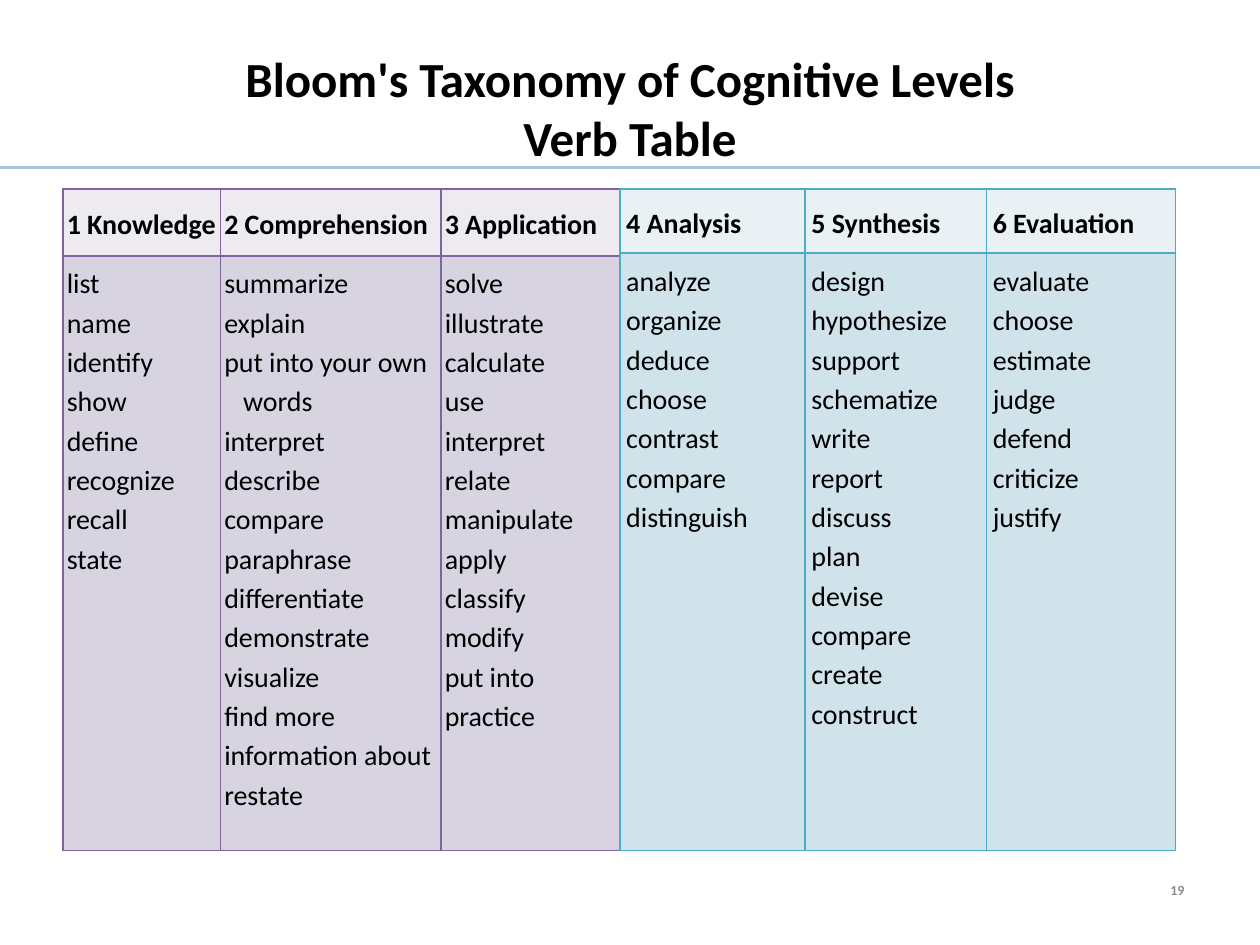
from pptx import Presentation
from pptx.dml.color import RGBColor
from pptx.enum.text import MSO_ANCHOR, PP_ALIGN
from pptx.oxml.ns import qn
from pptx.util import Inches, Pt
from lxml.etree import SubElement

HANGING_VERB = "put into your own words"

LOWER_LEVELS = {
    "1 Knowledge": "list, name, identify, show, define, recognize, recall, state",
    "2 Comprehension": "summarize, explain, put into your own words, interpret, describe, "
                       "compare, paraphrase, differentiate, demonstrate, visualize, "
                       "find more information about, restate",
    "3 Application": "solve, illustrate, calculate, use, interpret, relate, manipulate, "
                     "apply, classify, modify, put into practice",
}
HIGHER_LEVELS = {
    "4 Analysis": "analyze, organize, deduce, choose, contrast, compare, distinguish",
    "5 Synthesis": "design, hypothesize, support, schematize, write, report, discuss, "
                   "plan, devise, compare, create, construct",
    "6 Evaluation": "evaluate, choose, estimate, judge, defend, criticize, justify",
}


def color(value):
    return RGBColor.from_string(value)


def write(frame, lines, size=16, bold=False, ink="000000", align=PP_ALIGN.LEFT, spacing=1.0):
    """Put each line in its own paragraph of the text frame."""
    frame.word_wrap = True
    for index, line in enumerate(lines):
        para = frame.add_paragraph() if index else frame.paragraphs[0]
        para.alignment = align
        para.line_spacing = spacing
        span = para.add_run()
        span.text = line
        span.font.name = "Calibri"
        span.font.size = Pt(size)
        span.font.bold = bold
        span.font.color.rgb = color(ink)
        if line == HANGING_VERB:
            properties = para._p.get_or_add_pPr()
            properties.set("marL", str(Inches(0.15)))
            properties.set("indent", str(-Inches(0.15)))


class SlideBuilder:
    """Holds the current slide and draws its elements in one style."""

    def __init__(self, slide):
        self.slide = slide

    def rule(self, left, right, top, ink, width):
        line = self.slide.shapes.add_connector(
            1, Inches(left), Inches(top), Inches(right), Inches(top))
        line.line.color.rgb = color(ink)
        line.line.width = Pt(width)
        SubElement(line._element.spPr, qn("a:effectLst"))

    def text(self, lines, left, top, width, height, anchor=MSO_ANCHOR.TOP,
             bottom_inset=0.05, **style):
        box = self.slide.shapes.add_textbox(
            Inches(left), Inches(top), Inches(width), Inches(height))
        box.text_frame.vertical_anchor = anchor
        box.text_frame.margin_bottom = Inches(bottom_inset)
        write(box.text_frame, lines, **style)

    def border(self, cell, ink):
        properties = cell._tc.get_or_add_tcPr()
        for side in ("lnL", "lnR", "lnT", "lnB"):
            edge = SubElement(properties, qn(f"a:{side}"), w=str(Pt(1)))
            fill = SubElement(edge, qn("a:solidFill"))
            SubElement(fill, qn("a:srgbClr"), val=ink)

    def verb_table(self, levels, left, widths, heights, inset, ink, fills):
        """Draw one column per level: its name above its verbs."""
        table = self.slide.shapes.add_table(
            2, len(levels), Inches(left), Inches(1.5),
            Inches(sum(widths)), Inches(sum(heights))).table
        table.first_row = table.horz_banding = False
        for row, height in zip(table.rows, heights):
            row.height = Inches(height)
        for index, (level, verbs) in enumerate(levels.items()):
            table.columns[index].width = Inches(widths[index])
            for row, lines in enumerate(([level], verbs.split(", "))):
                cell = table.cell(row, index)
                self.border(cell, ink)
                cell.fill.solid()
                cell.fill.fore_color.rgb = color(fills[row])
                cell.margin_left = cell.margin_right = Inches(inset)
                cell.margin_top = cell.margin_bottom = Inches(0.05)
                cell.vertical_anchor = MSO_ANCHOR.TOP if row else MSO_ANCHOR.MIDDLE
                write(cell.text_frame, lines, bold=row == 0, spacing=1.15)


def main():
    deck = Presentation()
    deck.slide_width, deck.slide_height = Inches(10), Inches(7.5)
    page = SlideBuilder(deck.slides.add_slide(deck.slide_layouts[6]))

    page.rule(0, 10, 1.33, "AAC5DA", 2)
    page.text(["Bloom's Taxonomy of Cognitive Levels", "Verb Table"], 0.5, 0.17, 9, 1.78,
              anchor=MSO_ANCHOR.MIDDLE, bottom_inset=0.47,
              size=28, bold=True, align=PP_ALIGN.CENTER)
    page.verb_table(LOWER_LEVELS, 0.5, (1.25, 1.75, 1.42), (0.53, 4.72), 0.03,
                    "8064A2", ("EDEAF0", "D8D3E0"))
    page.verb_table(HIGHER_LEVELS, 4.92, (1.47, 1.44, 1.5), (0.51, 4.74), 0.05,
                    "4BACC6", ("E9F1F5", "D0E3EA"))
    page.text(["19"], 7.17, 6.95, 2.33, 0.4,
              size=8, bold=True, ink="8C8C8C", align=PP_ALIGN.RIGHT)

    deck.save("out.pptx")


if __name__ == "__main__":
    main()
